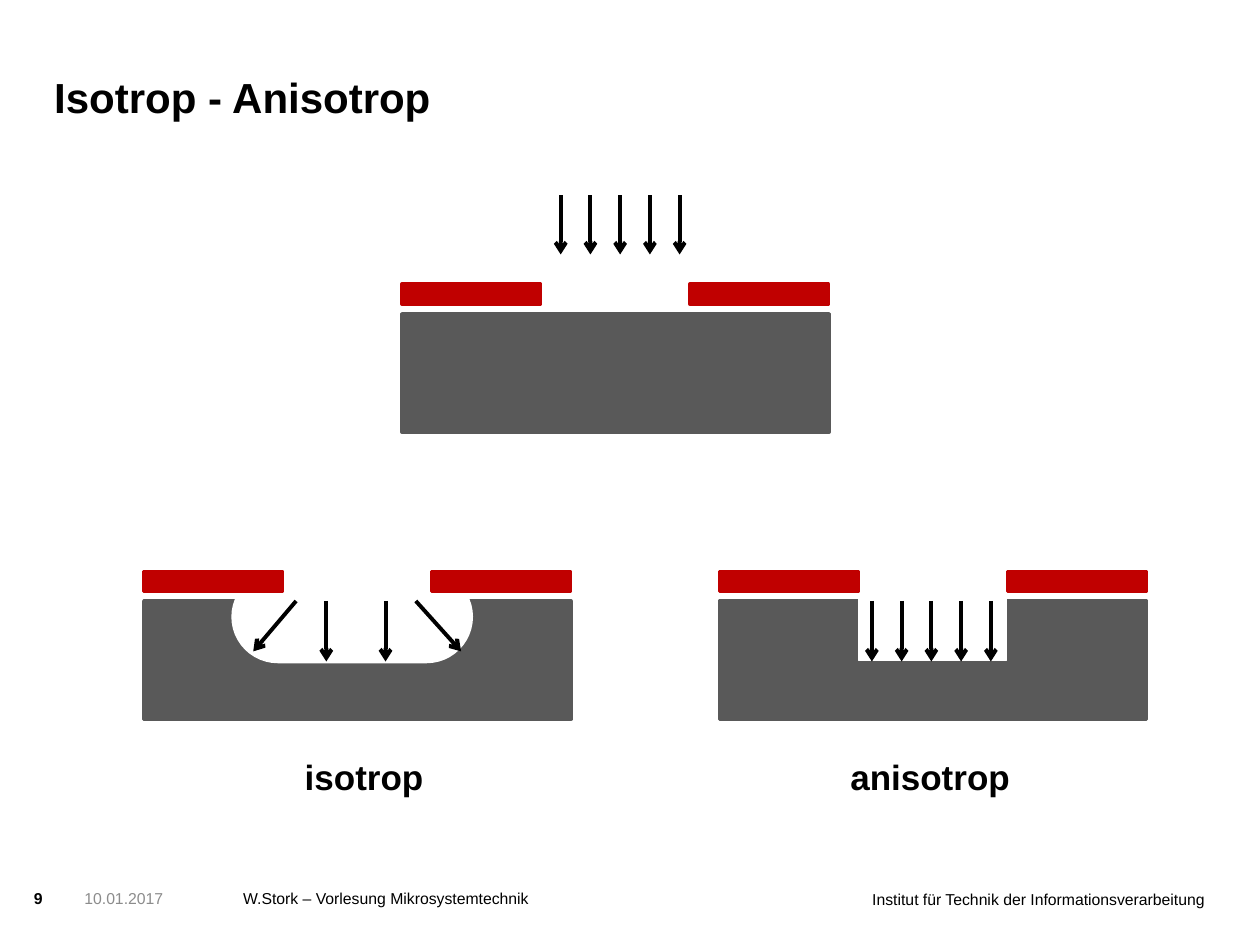
import pptx
import pptx.util
import pptx.dml.color
import pptx.enum.shapes
import pptx.enum.text
import pptx.oxml.ns
import lxml.etree

deck = pptx.Presentation()
deck.slide_width = pptx.util.Inches(10)
deck.slide_height = pptx.util.Inches(7.5)
page = deck.slides.add_slide(deck.slide_layouts[5])

# Grid of 100 columns by 75 square rows
unit = deck.slide_width // 100
RECT = pptx.enum.shapes.MSO_SHAPE.RECTANGLE
ROUND = pptx.enum.shapes.MSO_SHAPE.ROUNDED_RECTANGLE
ALIGN = pptx.enum.text.PP_ALIGN
ANCHOR = pptx.enum.text.MSO_ANCHOR
GREY, RED, WHITE, BLACK = "595959", "C00000", "FFFFFF", "000000"


def grid(*cells):
    return [round(cell * unit) for cell in cells]


def colour(code):
    return pptx.dml.color.RGBColor.from_string(code)


# Wafers, etched cavities, then the two mask halves of each wafer
wafers = [(31.9, 24.9), (11.4, 47.7), (57.1, 47.7)]
blocks = [(RECT, left, top, 33.9, 9.4, GREY, 2) for left, top in wafers]
blocks += [
    (RECT, 68.1, 46.9, 11.8, 5.5, WHITE, 0.25),
    (ROUND, 18.5, 45.4, 18.9, 7.1, WHITE, 2),
]
blocks += [
    (RECT, left + shift, top - 2.35, 11, 1.6, RED, 2)
    for left, top in wafers
    for shift in (0, 22.85)
]
for kind, left, top, width, height, code, weight in blocks:
    shape = page.shapes.add_shape(kind, *grid(left, top, width, height))
    shape.shadow.inherit = False
    shape.fill.solid()
    shape.fill.fore_color.rgb = colour(code)
    shape.line.color.rgb = colour(code)
    shape.line.width = pptx.util.Pt(weight)
    if kind == ROUND:
        shape.adjustments[0] = 0.5

# Etching arrows: beam above, isotropic fan, anisotropic beam
arrows = [(44.5 + 2.36 * i, 15.5, 44.5 + 2.36 * i, 20.2) for i in range(5)]
arrows += [
    (23.5, 47.7, 20.1, 51.7),
    (25.9, 47.7, 25.9, 52.5),
    (30.6, 47.7, 30.6, 52.5),
    (33, 47.7, 36.6, 51.7),
]
arrows += [(69.2 + 2.36 * i, 47.7, 69.2 + 2.36 * i, 52.5) for i in range(5)]
for ends in arrows:
    arrow = page.shapes.add_connector(
        pptx.enum.shapes.MSO_CONNECTOR.STRAIGHT, *grid(*ends))
    arrow.line.color.rgb = colour(BLACK)
    arrow.line.width = pptx.util.Pt(2.25)
    outline = arrow.line._get_or_add_ln()
    lxml.etree.SubElement(outline, pptx.oxml.ns.qn("a:tailEnd"), type="arrow")
    lxml.etree.SubElement(
        arrow._element.spPr, pptx.oxml.ns.qn("a:effectLst"))

# Title, captions and footer
title = page.shapes.title
title.left, title.top, title.width, title.height = grid(4.3, 3.6, 75.6, 6.1)
texts = [(title, "Isotrop - Anisotrop", 24, BLACK, True, ALIGN.LEFT)]
for cells, *style in [
    ((23.2, 59.5, 11.5, 4.4), "isotrop", 20, BLACK, True, ALIGN.LEFT),
    ((66.5, 59.5, 14.8, 4.4), "anisotrop", 20, BLACK, True, ALIGN.LEFT),
    ((2.7, 70.5, 3.6, 2.4), "9", 9, BLACK, True, ALIGN.LEFT),
    ((6.7, 70.5, 11.4, 3.9), "10.01.2017", 9, "8C8C8C", False, ALIGN.LEFT),
    ((19.3, 70.5, 29.9, 3.9), "W.Stork – Vorlesung Mikrosystemtechnik",
     9, BLACK, False, ALIGN.LEFT),
    ((65.7, 70.6, 29.9, 3.9),
     "Institut für Technik der Informationsverarbeitung",
     9, BLACK, False, ALIGN.RIGHT),
]:
    texts.append((page.shapes.add_textbox(*grid(*cells)), *style))

for box, words, size, code, bold, align in texts:
    frame = box.text_frame
    frame.text = words
    caption = size == 20
    frame.word_wrap = not caption
    frame.vertical_anchor = ANCHOR.BOTTOM if box is title else ANCHOR.TOP
    if caption:
        frame.auto_size = pptx.enum.text.MSO_AUTO_SIZE.SHAPE_TO_FIT_TEXT
    else:
        frame.auto_size = pptx.enum.text.MSO_AUTO_SIZE.NONE
        frame.margin_left = frame.margin_right = 0
        frame.margin_top = frame.margin_bottom = 0
    para = frame.paragraphs[0]
    para.alignment = align
    span = para.runs[0]
    span.font.name = "Arial"
    span.font.size = pptx.util.Pt(size)
    span.font.bold = bold
    span.font.color.rgb = colour(code)

deck.save("out.pptx")
